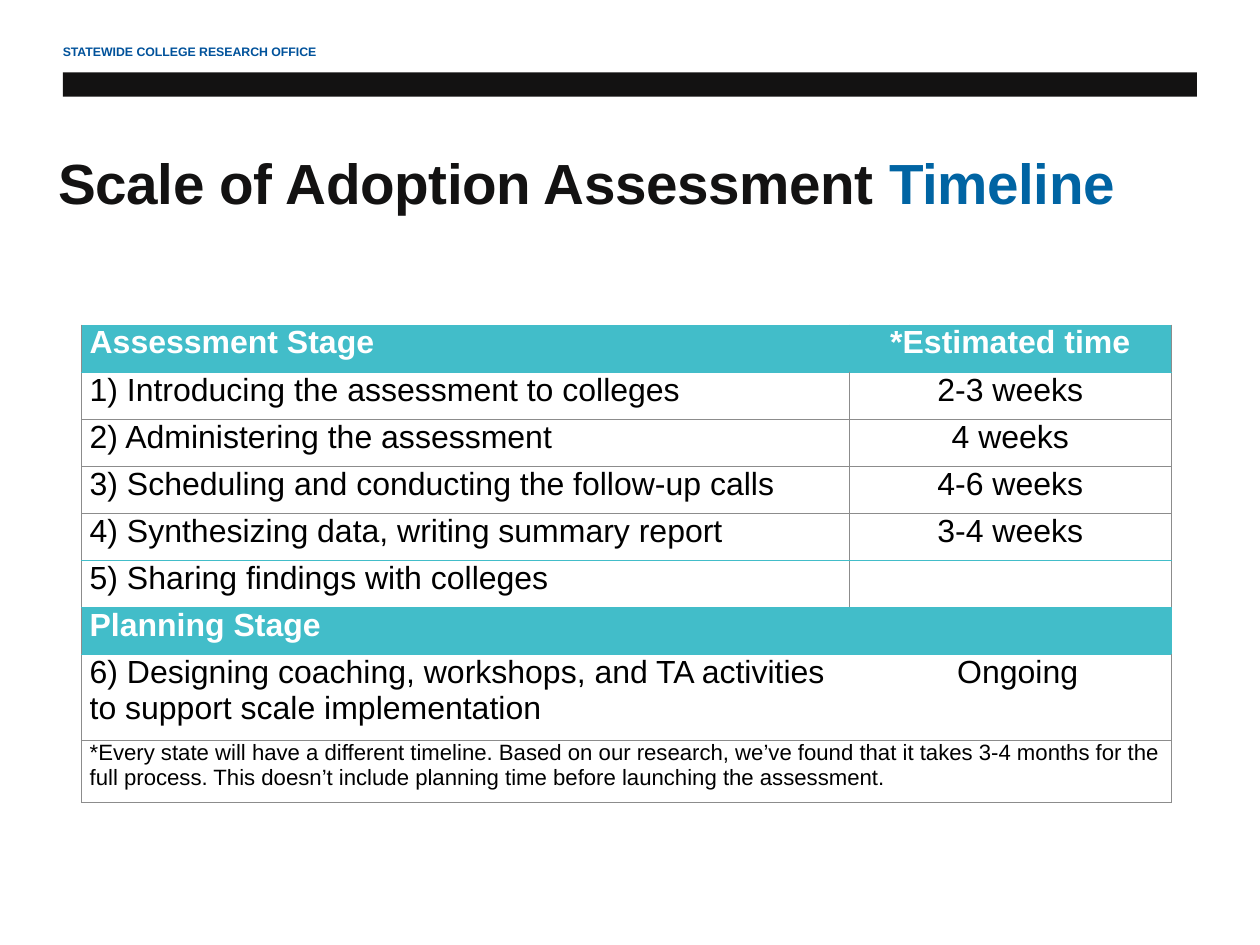
from dataclasses import dataclass

from lxml import etree
from pptx import Presentation
from pptx.dml.color import RGBColor
from pptx.enum.shapes import MSO_SHAPE
from pptx.enum.text import MSO_ANCHOR, PP_ALIGN
from pptx.oxml.ns import qn
from pptx.util import Cm, Pt

RECTANGLE = MSO_SHAPE.RECTANGLE
LEFT, CENTER = PP_ALIGN.LEFT, PP_ALIGN.CENTER
TOP = MSO_ANCHOR.TOP


@dataclass(frozen=True)
class Theme:
    font: str = "Arial"
    ink: str = "131212"
    black: str = "000000"
    white: str = "FFFFFF"
    label_blue: str = "00529B"
    title_blue: str = "0064A3"
    teal: str = "42BDC9"
    grey: str = "8C8C8C"
    label_size: int = 10
    title_size: int = 46
    table_size: int = 26
    note_size: int = 18
    border_width: float = 0.75


THEME = Theme()

COLUMN_WIDTHS = (22, 9.25)
ROW_HEIGHTS = (1.35,) * 7 + (2.46, 1.78)
HEADING_ROWS = (0, 6)
NOTE_ROW = 8
TEAL_LINES = (0, 1, 5, 6, 7)  # horizontal lines, counted from the table top
ONGOING_TAB = 24.87

# One text makes a row that spans both columns
ROWS = (
    ("Assessment Stage", "*Estimated time"),
    ("1) Introducing the assessment to colleges", "2-3 weeks"),
    ("2) Administering the assessment", "4 weeks"),
    ("3) Scheduling and conducting the follow-up calls", "4-6 weeks"),
    ("4) Synthesizing data, writing summary report", "3-4 weeks"),
    ("5) Sharing findings with colleges", ""),
    ("Planning Stage",),
    ("6) Designing coaching, workshops, and TA activities\tOngoing\n"
     "to support scale implementation",),
    ("*Every state will have a different timeline. Based on our research, "
     "we’ve found that it takes 3-4 months for the full process. This doesn’t "
     "include planning time before launching the assessment.",),
)


def style_font(font, size, color, bold=False):
    font.name = THEME.font
    font.size = Pt(size)
    font.bold = bold
    font.color.rgb = RGBColor.from_string(color)


def add_text(slide, left, top, width, height, parts, size, spacing=0):
    """Add one bold line made of (text, colour) parts."""
    shape = slide.shapes.add_textbox(Cm(left), Cm(top), Cm(width), Cm(height))
    frame = shape.text_frame
    frame.word_wrap = True
    frame.margin_left = frame.margin_right = 0
    frame.margin_top = frame.margin_bottom = 0
    paragraph = frame.paragraphs[0]
    style_font(paragraph.font, size, parts[0][1], bold=True)
    for text, color in parts:
        run = paragraph.add_run()
        run.text = text
        run.font.color.rgb = RGBColor.from_string(color)
        run._r.get_or_add_rPr().set("spc", str(spacing))


def add_bar(slide, left, top, width, height, color):
    shape = slide.shapes.add_shape(
        RECTANGLE, Cm(left), Cm(top), Cm(width), Cm(height))
    shape.shadow.inherit = False
    shape.fill.solid()
    shape.fill.fore_color.rgb = RGBColor.from_string(color)
    shape.line.fill.background()


def set_borders(cell, colors):
    """Give a cell its left, right, top and bottom line colours."""
    properties = cell._tc.get_or_add_tcPr()
    for index, (side, color) in enumerate(zip("LRTB", colors)):
        line = etree.Element(qn(f"a:ln{side}"), w=str(Pt(THEME.border_width)))
        fill = etree.SubElement(line, qn("a:solidFill"))
        etree.SubElement(fill, qn("a:srgbClr"), val=color)
        properties.insert(index, line)


def add_tab_stop(paragraph, position):
    properties = paragraph._p.get_or_add_pPr()
    tabs = etree.Element(qn("a:tabLst"))
    etree.SubElement(tabs, qn("a:tab"), pos=str(Cm(position)), algn="l")
    properties.insert(0, tabs)


def fill_cell(cell, text, row, column):
    heading = row in HEADING_ROWS
    cell.margin_left = Cm(0.23) if column == 0 else 0
    cell.margin_right = cell.margin_top = cell.margin_bottom = 0
    cell.vertical_anchor = TOP
    if heading:
        cell.fill.solid()
        cell.fill.fore_color.rgb = RGBColor.from_string(THEME.teal)
    else:
        cell.fill.background()

    cell.text = text
    size = THEME.note_size if row == NOTE_ROW else THEME.table_size
    color = THEME.white if heading else THEME.black
    for paragraph in cell.text_frame.paragraphs:
        paragraph.alignment = CENTER if column else LEFT
        style_font(paragraph.font, size, color, heading)
        if "\t" in paragraph.text:
            add_tab_stop(paragraph, ONGOING_TAB)

    middle = THEME.teal if heading else THEME.grey
    sides = (middle, THEME.grey) if column else (THEME.grey, middle)
    lines = [THEME.teal if line in TEAL_LINES else THEME.grey
             for line in (row, row + 1)]
    set_borders(cell, (*sides, *lines))


def add_timeline_table(slide, left, top):
    table = slide.shapes.add_table(
        len(ROWS), len(COLUMN_WIDTHS), Cm(left), Cm(top),
        Cm(sum(COLUMN_WIDTHS)), Cm(sum(ROW_HEIGHTS))).table
    table.first_row = table.horz_banding = False
    for column, width in zip(table.columns, COLUMN_WIDTHS):
        column.width = Cm(width)
    for row, (texts, height) in enumerate(zip(ROWS, ROW_HEIGHTS)):
        table.rows[row].height = Cm(height)
        if len(texts) == 1:
            table.cell(row, 0).merge(table.cell(row, 1))
        for column in range(len(COLUMN_WIDTHS)):
            text = texts[column] if column < len(texts) else ""
            fill_cell(table.cell(row, column), text, row, column)


def main():
    presentation = Presentation()
    presentation.slide_width = Cm(36.12)
    presentation.slide_height = Cm(27.1)
    slide = presentation.slides.add_slide(presentation.slide_layouts[6])

    # Page header
    add_bar(slide, 1.8, 2.08, 32.51, 0.69, THEME.ink)
    add_text(slide, 1.8, 1.27, 7.67, 0.46,
             [("STATEWIDE COLLEGE RESEARCH OFFICE", THEME.label_blue)],
             THEME.label_size)

    # Title
    add_text(slide, 1.68, 4.24, 32.82, 2.95,
             [("Scale of Adoption Assessment ", THEME.ink),
              ("Timeline", THEME.title_blue)],
             THEME.title_size, spacing=-30)

    # Stages and their times
    add_timeline_table(slide, 2.34, 9.32)

    presentation.save("out.pptx")


if __name__ == "__main__":
    main()
